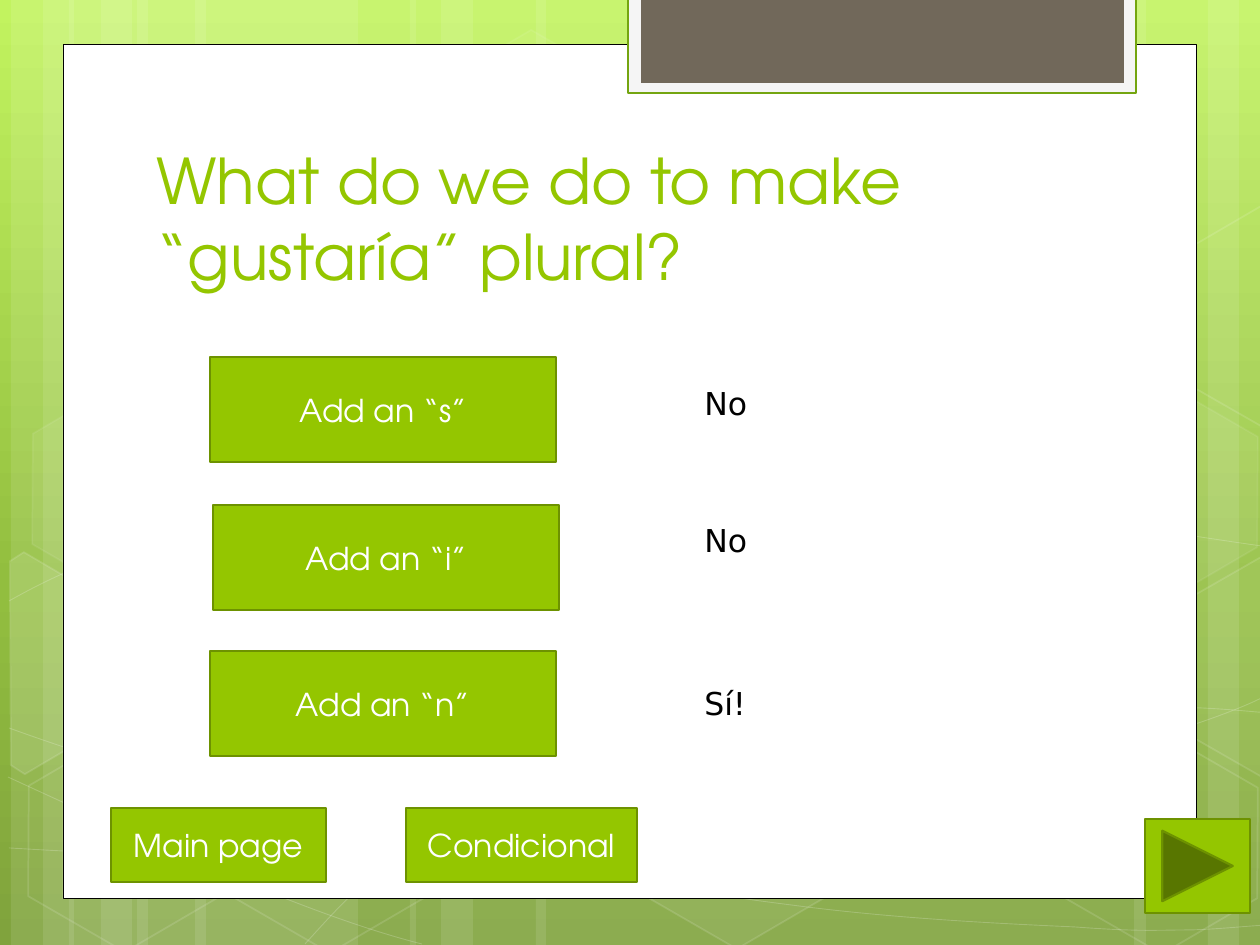
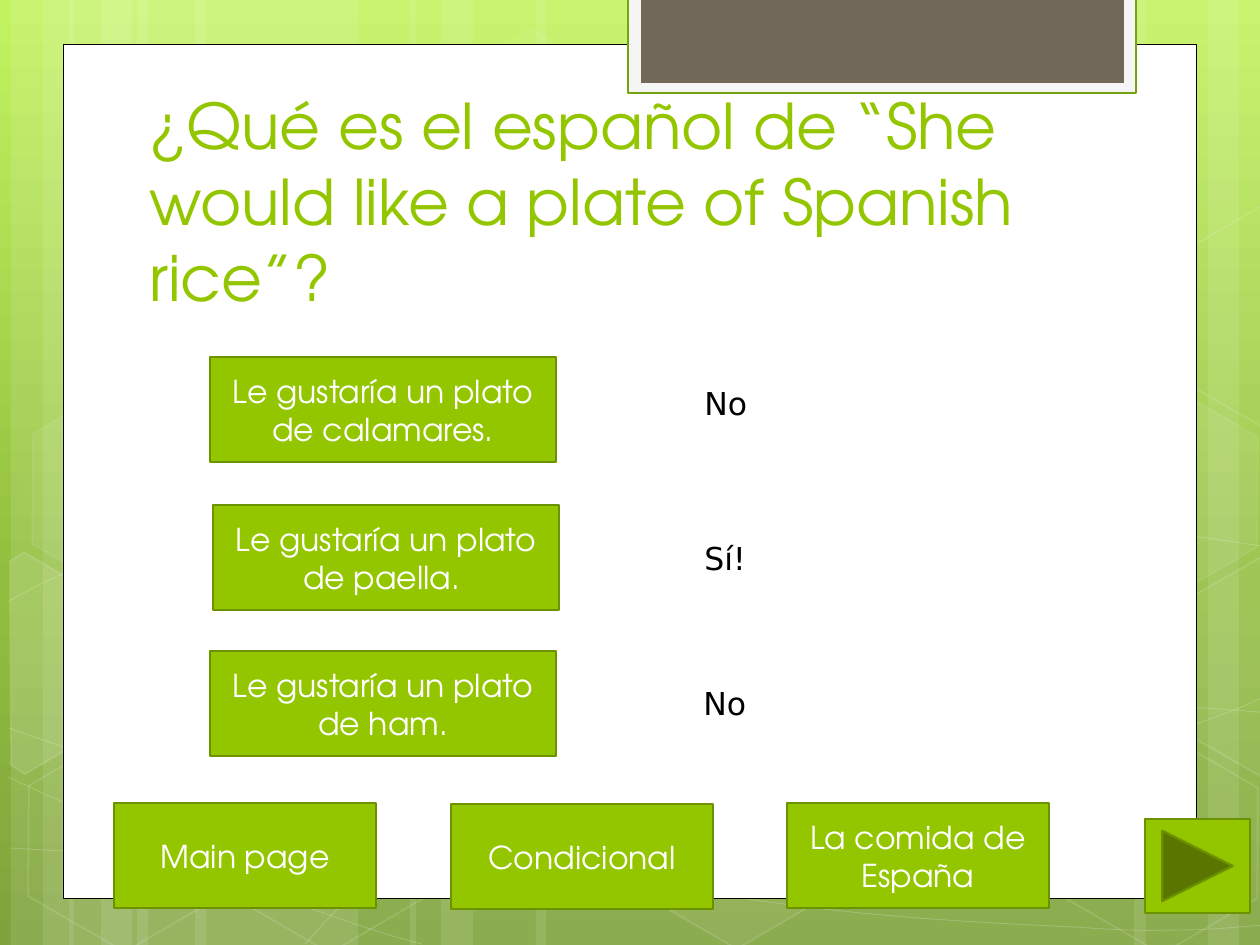
import copy
import math

import pptx
import pptx.dml.color
import pptx.enum.shapes
import pptx.enum.text
import pptx.oxml.ns
import pptx.util
from lxml import etree

RGB = pptx.dml.color.RGBColor
PRESET = pptx.enum.shapes.MSO_SHAPE
ANCHOR = pptx.enum.text.MSO_ANCHOR
ALIGN = pptx.enum.text.PP_ALIGN
qn = pptx.oxml.ns.qn

WHITE = RGB(0xFF, 0xFF, 0xFF)
BLACK = RGB(0, 0, 0)
LIME = RGB(0x94, 0xC6, 0x00)
LIME_EDGE = RGB(0x6D, 0x92, 0x00)
TAB_PAPER = RGB(0xF5, 0xF5, 0xF5)
TAB_EDGE = RGB(0x74, 0xA5, 0x10)
TAB_BROWN = RGB(0x71, 0x68, 0x5A)
SKY = [(0, RGB(0xC2, 0xF3, 0x5F)), (0.62, RGB(0x92, 0xBE, 0x3F)), (1, RGB(0x80, 0xA3, 0x3D))]

HEADING_FONT = "TeX Gyre Adventor"
REPLY_FONT = "DejaVu Sans"
EMU_PER_PX = 914400 / 126
WIDTH, HEIGHT = 1260, 945
TILT = 30

STRIPES = [
    (137, 221), (11, 63), (43, 105), (195, 221), (69, 63), (101, 105),
    (925, 221), (1208, 63), (1134, 105), (536, 389), (410, 63), (441, 105),
]
CURVES = [
    [(9, 848), (77, 852), (145, 856), (239, 854), (334, 853), (451, 851), (577, 838),
     (703, 825), (882, 801), (998, 777), (1113, 753), (1231, 716), (1269, 694)],
    [(9, 601), (45, 581), (82, 562), (152, 543), (224, 524), (326, 496), (437, 488),
     (549, 479), (685, 478), (824, 488), (963, 498), (1193, 537), (1269, 547)],
    [(8, 777), (160, 847), (311, 916), (422, 944)],
    [(9, 728), (48, 742), (88, 756), (161, 776), (234, 795), (344, 827), (450, 848),
     (554, 869), (687, 892), (791, 905), (896, 919), (1008, 924), (1075, 927),
     (1142, 932), (1158, 930), (1191, 930), (1223, 929), (1246, 926), (1269, 925)],
    [(305, 944), (328, 919), (350, 893), (381, 871), (411, 847), (454, 823), (489, 805),
     (524, 788), (546, 780), (591, 767), (638, 754), (722, 737), (766, 728),
     (811, 719), (818, 719), (857, 717), (896, 713), (958, 709), (1000, 708),
     (1045, 707), (1116, 708), (1116, 708), (1116, 708), (1201, 708), (1201, 708),
     (1223, 709), (1245, 711), (1256, 712), (1268, 713), (1264, 712), (1268, 713)],
]
HEXAGONS = [
    (421, 45, 4, 8), (626, 742, 6, 12), (14, 745, 0, 12), (18, 393, 7, 8),
    (219, 746, 0, 12), (949, 571, 10, 12), (1051, 747, 0, 12), (1051, 396, 7, 8),
]
CUT_HEXAGONS = [
    ((45, 675), [(10, 561), (24, 552), (121, 609), (120, 718), (25, 774), (11, 765)], 10),
    ((1241, 655), [(1167, 611), (1263, 556), (1271, 562), (1271, 772), (1263, 777),
                   (1167, 722)], 4),
    ((1241, 304), [(1167, 261), (1263, 205), (1273, 211), (1271, 422), (1263, 427),
                   (1167, 372)], 0),
]
CARD = (63, 45, 1134, 854)
TAB = (628, -3, 508, 96)
TAB_INNER = (641, -3, 483, 86)
NEXT_BUTTON = (1145, 819, 105, 94)
OPTION_SPOTS = [(210, 357), (213, 505), (210, 651)]
OPTION_SIZE = (346, 105)
REPLY_SIZE = (262, 50)

QUESTIONS = [
    {
        "title": ("What do we do to make “gustaría” plural?", (144, 141, 968, 158)),
        "options": ["Add an “s”", "Add an “i”", "Add an “n”"],
        "replies": [("No", 692, 378), ("No", 692, 515), ("Sí!", 692, 678)],
        "links": [("Main page", (111, 808, 215, 74)), ("Condicional", (406, 808, 231, 74))],
    },
    {
        "title": ("¿Qué es el español de “She would like a plate of Spanish rice”?",
                  (137, 84, 968, 236)),
        "options": ["Le gustaría un plato de calamares.", "Le gustaría un plato de paella. ",
                    "Le gustaría un plato de ham."],
        "replies": [("No", 692, 378), ("Sí!", 692, 533), ("No", 691, 678)],
        "links": [("Main page", (114, 803, 262, 105)), ("Condicional", (451, 804, 262, 105)),
                  ("La comida de España", (787, 803, 262, 105))],
    },
]


def px(length):
    return pptx.util.Emu(round(length * EMU_PER_PX))


def set_alpha(shape, place, percent):
    for colour in shape.element.xpath(f"p:spPr/{place}a:solidFill/a:srgbClr"):
        alpha = etree.SubElement(colour, qn("a:alpha"))
        alpha.set("val", str(percent * 1000))


def paint(shape, fill=None, edge=None, width=1.0, fill_alpha=100, edge_alpha=100):
    shape.shadow.inherit = False
    if fill is None or fill_alpha == 0:
        shape.fill.background()
    else:
        shape.fill.solid()
        shape.fill.fore_color.rgb = fill
    if edge is None:
        shape.line.fill.background()
    else:
        shape.line.color.rgb = edge
        shape.line.width = pptx.util.Pt(width)
    if fill_alpha < 100:
        set_alpha(shape, "", fill_alpha)
    if edge_alpha < 100:
        set_alpha(shape, "a:ln/", edge_alpha)


def add_preset(slide, preset, box, **look):
    shape = slide.shapes.add_shape(preset, *map(px, box))
    paint(shape, **look)
    return shape


def add_outline(slide, points, closed, **look):
    corners = [(px(x), px(y)) for x, y in points]
    builder = slide.shapes.build_freeform(*corners[0], scale=1.0)
    builder.add_line_segments(corners[1:], close=closed)
    outline = builder.convert_to_shape()
    paint(outline, **look)
    return outline


def bend(outline):
    lines = outline.element.xpath(".//a:lnTo")
    route = lines[0].getparent()
    for first in range(0, len(lines), 3):
        curve = etree.SubElement(route, qn("a:cubicBezTo"))
        for line in lines[first:first + 3]:
            curve.append(line[0])
            route.remove(line)


def untilt(point, centre):
    angle = math.radians(TILT)
    dx, dy = point[0] - centre[0], point[1] - centre[1]
    return (centre[0] + dx * math.cos(angle) + dy * math.sin(angle),
            centre[1] - dx * math.sin(angle) + dy * math.cos(angle))


def write(shape, text, font, size, colour, align, anchor):
    frame = shape.text_frame
    frame.word_wrap = True
    frame.vertical_anchor = anchor
    paragraph = frame.paragraphs[0]
    paragraph.alignment = align
    run = paragraph.add_run()
    run.text = text
    run.font.name = font
    run.font.size = pptx.util.Pt(size)
    run.font.color.rgb = colour


def add_label(slide, box, text, font, size, colour, anchor):
    label = slide.shapes.add_textbox(*map(px, box))
    write(label, text, font, size, colour, ALIGN.LEFT, anchor)


def add_button(slide, box, text):
    button = add_preset(slide, PRESET.ACTION_BUTTON_CUSTOM, box,
                        fill=LIME, edge=LIME_EDGE, width=1.25)
    write(button, text, HEADING_FONT, 18, WHITE, ALIGN.CENTER, ANCHOR.MIDDLE)


def add_sky(slide):
    sky = slide.background.fill
    sky.gradient()
    sky.gradient_angle = 270
    stops = slide.element.xpath(".//a:gsLst")[0]
    stops.append(copy.deepcopy(stops[0]))
    for stop, (position, colour) in zip(sky.gradient_stops, SKY):
        stop.position = position
        stop.color.rgb = colour


def add_backdrop(slide):
    add_sky(slide)
    for left, width in STRIPES:
        add_preset(slide, PRESET.RECTANGLE, (left, 0, width, HEIGHT), fill=WHITE, fill_alpha=10)
    for knots in CURVES:
        bend(add_outline(slide, knots, False, edge=WHITE, width=0.5, edge_alpha=20))
    for left, top, fill_alpha, edge_alpha in HEXAGONS:
        hexagon = add_preset(slide, PRESET.HEXAGON, (left, top, 221, 192), fill=WHITE,
                             edge=WHITE, fill_alpha=fill_alpha, edge_alpha=edge_alpha)
        hexagon.adjustments[0] = 0.285
        hexagon.rotation = TILT
    for centre, corners, fill_alpha in CUT_HEXAGONS:
        upright = [untilt(corner, centre) for corner in corners]
        cut_hexagon = add_outline(slide, upright, True, fill=WHITE, edge=WHITE,
                                  fill_alpha=fill_alpha, edge_alpha=12)
        cut_hexagon.rotation = TILT
    add_preset(slide, PRESET.RECTANGLE, CARD, fill=WHITE, edge=BLACK, width=0.5)
    add_preset(slide, PRESET.RECTANGLE, TAB, fill=TAB_PAPER, edge=TAB_EDGE, width=1.25)
    add_preset(slide, PRESET.RECTANGLE, TAB_INNER, fill=TAB_BROWN)


def add_question(slide, question):
    add_backdrop(slide)
    title, title_box = question["title"]
    add_label(slide, title_box, title, HEADING_FONT, 36, LIME, ANCHOR.BOTTOM)
    for spot, option in zip(OPTION_SPOTS, question["options"]):
        add_button(slide, spot + OPTION_SIZE, option)
    for reply, left, top in question["replies"]:
        add_label(slide, (left, top) + REPLY_SIZE, reply, REPLY_FONT, 18, BLACK, ANCHOR.TOP)
    add_preset(slide, PRESET.ACTION_BUTTON_FORWARD_OR_NEXT, NEXT_BUTTON,
               fill=LIME, edge=LIME_EDGE, width=1.25)
    for link, box in question["links"]:
        add_button(slide, box, link)


def main():
    deck = pptx.Presentation()
    deck.slide_width, deck.slide_height = px(WIDTH), px(HEIGHT)
    blank = deck.slide_layouts[6]
    for question in QUESTIONS:
        add_question(deck.slides.add_slide(blank), question)
    deck.save("out.pptx")


if __name__ == "__main__":
    main()
